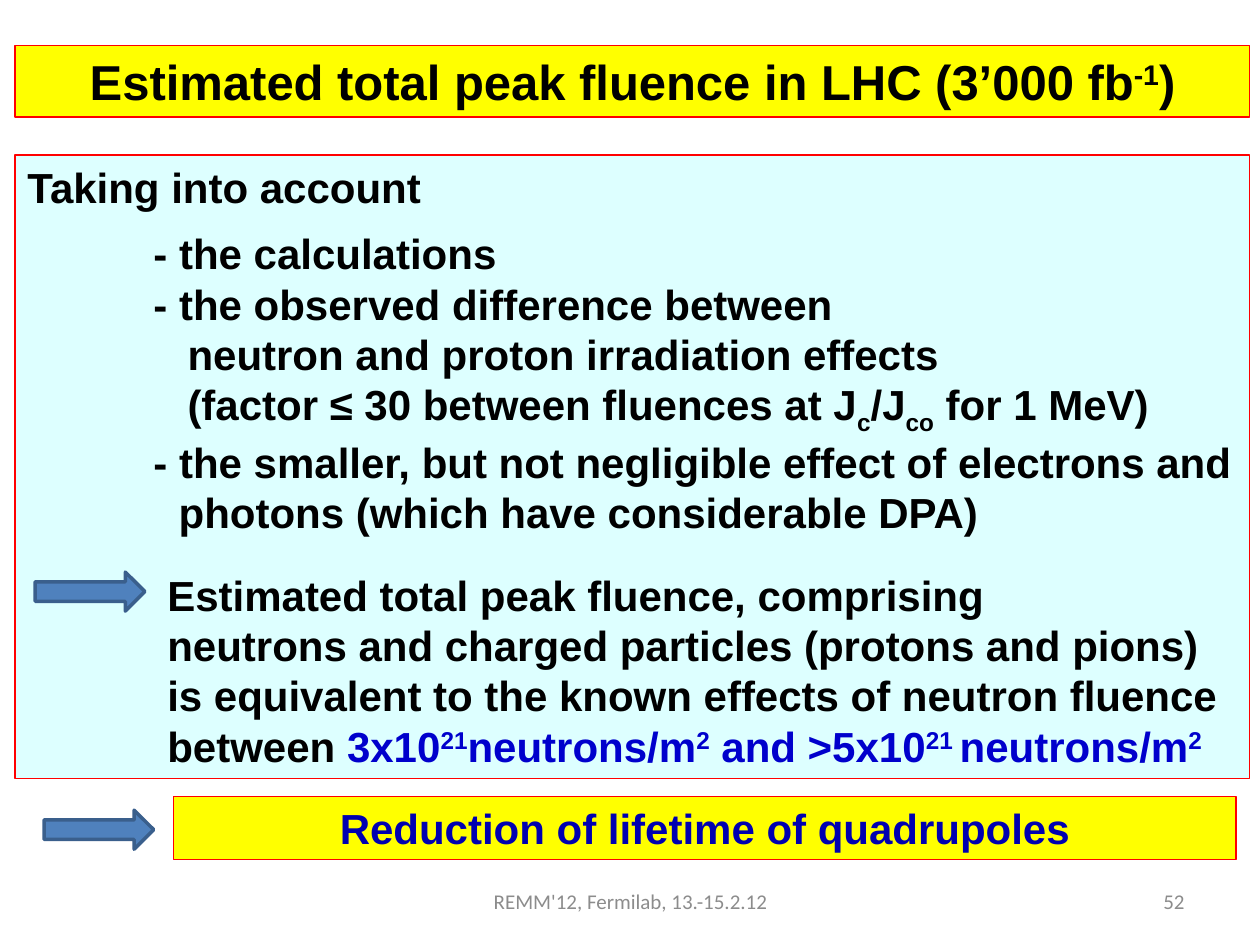
import pptx
import pptx.dml.color
import pptx.enum.shapes
import pptx.enum.text
import pptx.util

Inches = pptx.util.Inches
Pt = pptx.util.Pt
RGBColor = pptx.dml.color.RGBColor
Shape = pptx.enum.shapes.MSO_SHAPE
Align = pptx.enum.text.PP_ALIGN
Anchor = pptx.enum.text.MSO_ANCHOR

BLACK = RGBColor(0x00, 0x00, 0x00)
BLUE = RGBColor(0x00, 0x00, 0xCC)
NAVY = RGBColor(0x00, 0x00, 0xB0)
GREY = RGBColor(0x8C, 0x8C, 0x8C)
RED = RGBColor(0xFF, 0x00, 0x00)
YELLOW = RGBColor(0xFF, 0xFF, 0x00)
PALE_CYAN = RGBColor(0xDD, 0xFF, 0xFF)
ARROW_FILL = RGBColor(0x4F, 0x81, 0xBD)
ARROW_LINE = RGBColor(0x3A, 0x5F, 0x8C)

TITLE = {"name": "Arial", "size": Pt(28), "bold": True}
BODY = {"name": "Arial", "size": Pt(24), "bold": True}
FOOTER = {"name": "Calibri", "size": Pt(12)}

SUPER, SUB = 30, -25
ITEM, ITEM_MORE, ITEM_LAST, RESULT = 1.0, 1.27, 1.2, 1.11

# Each line: left indent in inches, space before in points, spans.
# Each span: text, then optionally its baseline shift and its colour.
ACCOUNT_LINES = [
    (0, 0, [("Taking into account",)]),
    (ITEM, 9.2, [("- the calculations",)]),
    (ITEM, 0, [("- the observed difference between",)]),
    (ITEM_MORE, 0, [("neutron and proton irradiation effects",)]),
    (ITEM_MORE, 0, [("(factor ≤ 30 between fluences at J",), ("c", SUB), ("/J",),
                    ("co", SUB), (" for 1 MeV)",)]),
    (ITEM, 0, [("- the smaller, but not negligible effect of electrons and",)]),
    (ITEM_LAST, 0, [("photons (which have considerable DPA)",)]),
    (RESULT, 18.4, [("Estimated total peak fluence, comprising",)]),
    (RESULT, 0, [("neutrons and charged particles (protons and pions)",)]),
    (RESULT, 0, [("is equivalent to the known effects of neutron fluence",)]),
    (RESULT, 0, [("between ",), ("3x10", 0, BLUE), ("21", SUPER, BLUE),
                 ("neutrons/m", 0, BLUE), ("2", SUPER, BLUE),
                 (" and >5x10", 0, BLUE), ("21 ", SUPER, BLUE),
                 ("neutrons/m", 0, BLUE), ("2", SUPER, BLUE)]),
]
TITLE_SPANS = [("Estimated total peak fluence in LHC (3’000 fb",), ("-1", SUPER), (")",)]


def add_span(para, font_format, text, baseline=0, color=BLACK):
    span = para.add_run()
    span.text = text
    for key, value in font_format.items():
        setattr(span.font, key, value)
    span.font.color.rgb = color
    if baseline:
        span._r.get_or_add_rPr().set("baseline", str(baseline * 1000))


def write_lines(box, lines, font_format, align=Align.LEFT, anchor=Anchor.TOP):
    frame = box.text_frame
    frame.word_wrap = True
    frame.vertical_anchor = anchor
    for index, (indent, space, spans) in enumerate(lines):
        para = frame.add_paragraph() if index else frame.paragraphs[0]
        para.alignment = align
        para.space_before = Pt(space)
        if indent:
            para._p.get_or_add_pPr().set("marL", str(Inches(indent)))
        for span in spans:
            add_span(para, font_format, *span)


def add_filled(page, kind, place, fill, line, width):
    shape = page.shapes.add_shape(kind, *map(Inches, place))
    shape.shadow.inherit = False
    shape.fill.solid()
    shape.fill.fore_color.rgb = fill
    shape.line.color.rgb = line
    shape.line.width = Pt(width)
    return shape


def add_panel(page, place, fill, lines, font_format, align):
    box = add_filled(page, Shape.RECTANGLE, place, fill, RED, 0.75)
    write_lines(box, lines, font_format, align)


def add_arrow(page, left, top):
    add_filled(page, Shape.RIGHT_ARROW, (left, top, 0.87, 0.31), ARROW_FILL, ARROW_LINE, 2)


def add_footer(page, left, width, text, align):
    box = page.shapes.add_textbox(*map(Inches, (left, 6.95, width, 0.4)))
    write_lines(box, [(0, 0, [(text, 0, GREY)])], FOOTER, align, Anchor.MIDDLE)


def main():
    deck = pptx.Presentation()
    deck.slide_width, deck.slide_height = Inches(10), Inches(7.5)
    page = deck.slides.add_slide(deck.slide_layouts[6])

    add_footer(page, 3.42, 3.17, "REMM'12, Fermilab, 13.-15.2.12", Align.CENTER)
    add_footer(page, 7.17, 2.33, "52", Align.RIGHT)
    add_panel(page, (0.12, 1.23, 9.8, 4.95), PALE_CYAN, ACCOUNT_LINES, BODY, Align.LEFT)
    add_panel(page, (0.12, 0.36, 9.8, 0.57), YELLOW, [(0, 0, TITLE_SPANS)], TITLE, Align.CENTER)
    add_arrow(page, 0.28, 4.54)
    add_arrow(page, 0.35, 6.43)
    conclusion = [("Reduction of lifetime of quadrupoles", 0, NAVY)]
    add_panel(page, (1.38, 6.32, 8.43, 0.5), YELLOW, [(0, 0, conclusion)], BODY, Align.CENTER)

    deck.save("out.pptx")


if __name__ == "__main__":
    main()
